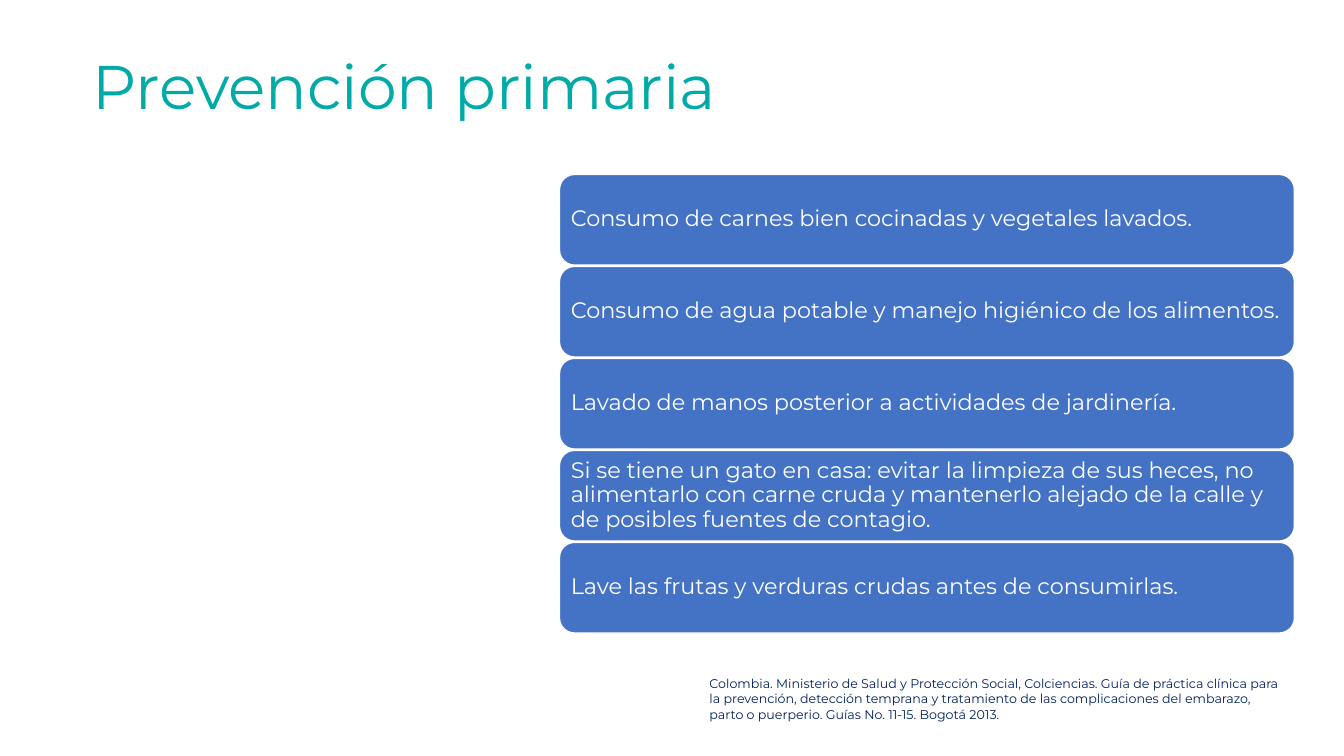
"""Build the slide on primary prevention."""
from dataclasses import dataclass
from typing import Any

from pptx import Presentation
from pptx.dml.color import RGBColor
from pptx.enum import shapes, text
from pptx.util import Pt

TEAL = RGBColor(0x00, 0xAA, 0xA7)
BLUE = RGBColor(0x44, 0x72, 0xC4)
NAVY = RGBColor(0x00, 0x20, 0x60)
WHITE = RGBColor(0xFF, 0xFF, 0xFF)

CARD_LEFT, CARD_TOP = 399.6, 124.6
CARD_WIDTH, CARD_HEIGHT, CARD_PITCH = 525, 64.8, 65.7

MEASURES = [
    "Consumo de carnes bien cocinadas y vegetales lavados.",
    "Consumo de agua potable y manejo higiénico de los alimentos.",
    "Lavado de manos posterior a actividades de jardinería.",
    "Si se tiene un gato en casa: evitar la limpieza de sus heces, no alimentarlo "
    "con carne cruda y mantenerlo alejado de la calle y de posibles fuentes de contagio.",
    "Lave las frutas y verduras crudas antes de consumirlas.",
]
CITATION = (
    "Colombia. Ministerio de Salud y Protección Social, Colciencias. Guía de práctica "
    "clínica para la prevención, detección temprana y tratamiento de las complicaciones "
    "del embarazo, parto o puerperio. Guías No. 11-15. Bogotá 2013."
)


@dataclass(frozen=True)
class Card:
    """A prevention measure and its top edge in points."""
    content: str
    top: float


def set_all(target: Any, values: dict[str, Any]) -> None:
    """Set each attribute named in values."""
    for name, value in values.items():
        setattr(target, name, value)


def write(sp: Any, content: str, size: float, color: RGBColor, frame: dict[str, Any],
          paragraph: dict[str, Any]) -> None:
    """Write one formatted paragraph into a shape."""
    tf = sp.text_frame
    set_all(tf, {"word_wrap": True, "auto_size": text.MSO_AUTO_SIZE.NONE,
                 "vertical_anchor": text.MSO_ANCHOR.MIDDLE} | frame)
    p = tf.paragraphs[0]
    set_all(p, {"alignment": text.PP_ALIGN.LEFT} | paragraph)
    r = p.add_run()
    r.text = content
    set_all(r.font, {"name": "Montserrat", "size": Pt(size)})
    r.font.color.rgb = color


def draw_title(s: Any) -> None:
    """Place and format the title placeholder."""
    sp = s.shapes.title
    set_all(sp, {"left": Pt(36), "top": Pt(11.5), "width": Pt(506), "height": Pt(104.4)})
    write(sp, "Prevención primaria", 44, TEAL, {},
          {"alignment": text.PP_ALIGN.CENTER, "line_spacing": 0.9})


def draw_card(s: Any, card: Card) -> None:
    """Draw one rounded card with its text."""
    sp = s.shapes.add_shape(shapes.MSO_SHAPE.ROUNDED_RECTANGLE, Pt(CARD_LEFT),
                            Pt(card.top), Pt(CARD_WIDTH), Pt(CARD_HEIGHT))
    sp.shadow.inherit = False
    sp.fill.solid()
    sp.fill.fore_color.rgb = BLUE
    sp.line.color.rgb = WHITE
    sp.line.width = Pt(1)
    margins = {f"margin_{side}": Pt(5) for side in ("left", "top", "right", "bottom")}
    write(sp, card.content, 16, WHITE, margins, {"line_spacing": 0.9})


def draw_citation(s: Any) -> None:
    """Add the source citation at the foot."""
    sp = s.shapes.add_textbox(Pt(499.7), Pt(469.4), Pt(424.8), Pt(70.6))
    write(sp, CITATION, 9, NAVY, {"margin_bottom": Pt(14.6)}, {})


def main() -> None:
    """Build and save the presentation."""
    prs = Presentation()
    set_all(prs, {"slide_width": Pt(960), "slide_height": Pt(540)})
    s = prs.slides.add_slide(prs.slide_layouts.get_by_name("Title Only"))
    draw_title(s)
    for i, content in enumerate(MEASURES):
        draw_card(s, Card(content, CARD_TOP + i * CARD_PITCH))
    draw_citation(s)
    prs.save("out.pptx")


if __name__ == "__main__":
    main()
